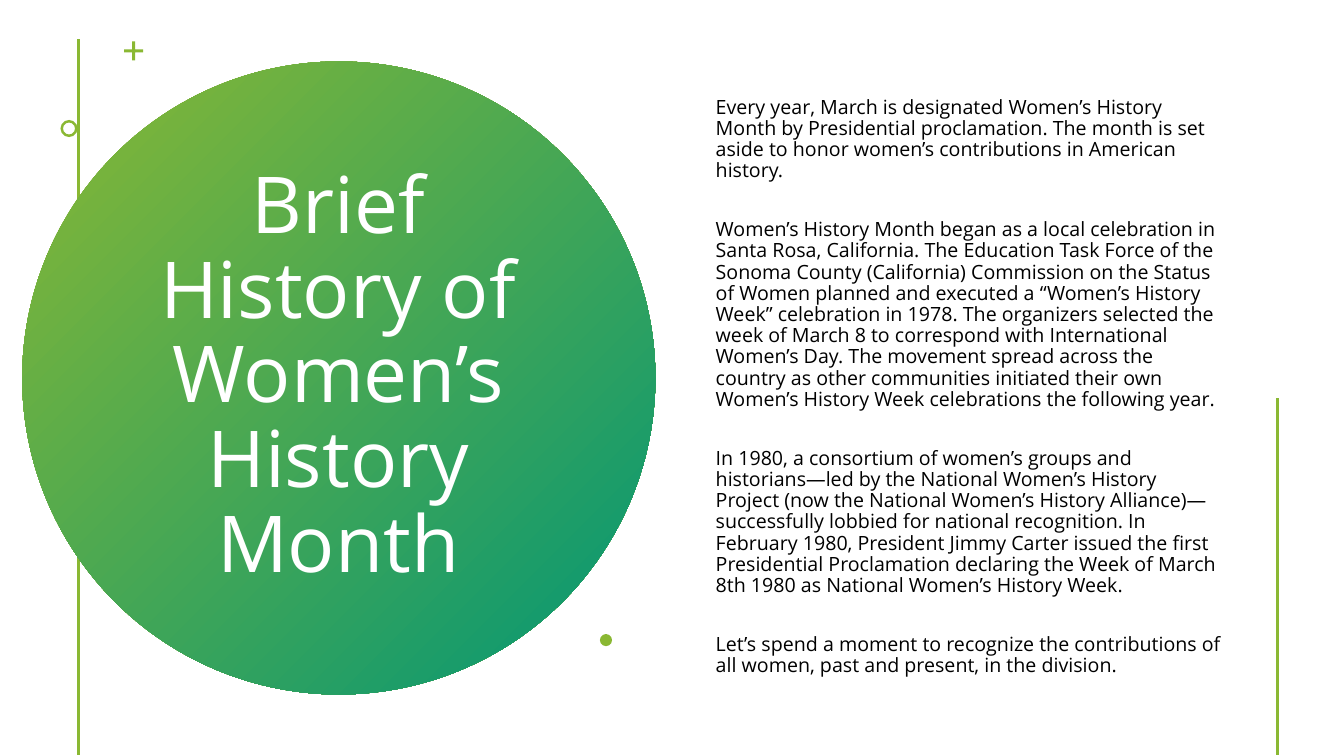
"""Builds the Women's History Month slide."""
from dataclasses import dataclass

from lxml import etree
from pptx import Presentation, util as u
from pptx.dml.color import RGBColor
from pptx.enum import shapes, text
from pptx.oxml import ns

EMU_PER_PX = 9144


@dataclass(frozen=True)
class Theme:
    """Colours, font and type sizes."""
    accent: str = "8AB833"
    teal: str = "029676"
    white: str = "FFFFFF"
    black: str = "000000"
    font: str = "Open Sans"
    title_size: int = 56
    body_size: int = 14
    line_spacing: float = 0.9
    paragraph_gap: int = 27
    rule_width: int = 2


class SlideBuilder:
    """Draws styled elements on one slide."""

    def __init__(self, slide, theme):
        """Keep the slide and its theme."""
        self.slide = slide
        self.theme = theme

    def rule(self, x, top, bottom):
        """Draw a vertical accent line."""
        line = self.slide.shapes.add_connector(
            shapes.MSO_CONNECTOR.STRAIGHT, *px(x, top, x, bottom))
        line.line.color.rgb = RGBColor.from_string(self.theme.accent)
        line.line.width = u.Pt(self.theme.rule_width)
        etree.SubElement(line._element.spPr, ns.qn("a:effectLst"))

    def shape(self, kind, box, adjustment=None):
        """Draw an accent shape without outline or shadow."""
        shape = self.slide.shapes.add_shape(kind, *px(*box))
        shape.shadow.inherit = False
        shape.line.fill.background()
        shape.fill.solid()
        shape.fill.fore_color.rgb = RGBColor.from_string(self.theme.accent)
        if adjustment is not None:
            shape.adjustments[0] = adjustment
        return shape

    def gradient_circle(self, box):
        """Draw a circle shaded from accent to teal, downwards to the right."""
        fill = self.shape(shapes.MSO_SHAPE.OVAL, box).fill
        fill.gradient()
        fill.gradient_angle = 315
        colors = (self.theme.accent, self.theme.teal)
        for stop, position, color in zip(fill.gradient_stops, (0, 1), colors):
            stop.position = position
            stop.color.rgb = RGBColor.from_string(color)

    def text(self, box, paragraphs, size, color, align):
        """Write vertically centred paragraphs."""
        frame = self.slide.shapes.add_textbox(*px(*box)).text_frame
        frame.word_wrap = True
        frame.vertical_anchor = text.MSO_ANCHOR.MIDDLE
        frame.text = "\n".join(paragraphs)
        for index, paragraph in enumerate(frame.paragraphs):
            paragraph.alignment = align
            paragraph.line_spacing = self.theme.line_spacing
            paragraph.space_before = u.Pt(self.theme.paragraph_gap if index else 0)
            for run in paragraph.runs:
                run.font.name = self.theme.font
                run.font.size = u.Pt(size)
                run.font.color.rgb = RGBColor.from_string(color)


def px(*lengths):
    """Turn px into EMU."""
    return [u.Emu(length * EMU_PER_PX) for length in lengths]


TITLE = "Brief History of Women’s History Month"
BODY = (
    "Every year, March is designated Women’s History Month by Presidential "
    "proclamation. The month is set aside to honor women’s contributions in "
    "American history.",
    "Women’s History Month began as a local celebration in Santa Rosa, "
    "California. The Education Task Force of the Sonoma County (California) "
    "Commission on the Status of Women planned and executed a “Women’s History "
    "Week” celebration in 1978. The organizers selected the week of March 8 to "
    "correspond with International Women’s Day. The movement spread across the "
    "country as other communities initiated their own Women’s History Week "
    "celebrations the following year.",
    "In 1980, a consortium of women’s groups and historians—led by the National "
    "Women’s History Project (now the National Women’s History "
    "Alliance)—successfully lobbied for national recognition. In February 1980, "
    "President Jimmy Carter issued the first Presidential Proclamation declaring "
    "the Week of March 8th 1980 as National Women’s History Week.",
    "Let’s spend a moment to recognize the contributions of all women, past and "
    "present, in the division.",
)


def main():
    """Build and save the slide."""
    presentation = Presentation()
    presentation.slide_width, presentation.slide_height = px(1333, 750)
    slide = presentation.slides.add_slide(presentation.slide_layouts[6])
    theme = Theme()
    builder = SlideBuilder(slide, theme)

    builder.rule(78, 39, 749)
    builder.gradient_circle((22, 61, 628, 628))
    builder.text((136, 141, 399, 467), [TITLE], theme.title_size, theme.white,
                 text.PP_ALIGN.CENTER)
    builder.shape(shapes.MSO_SHAPE.CROSS, (123, 41, 19, 19), 0.42)
    builder.shape(shapes.MSO_SHAPE.DONUT, (60, 119, 17, 17), 0.15)
    builder.text((700, 40, 525, 688), BODY, theme.body_size, theme.black,
                 text.PP_ALIGN.LEFT)
    builder.shape(shapes.MSO_SHAPE.OVAL, (595, 629, 12, 12))
    builder.rule(1267, 395, 749)

    presentation.save("out.pptx")


if __name__ == "__main__":
    main()
